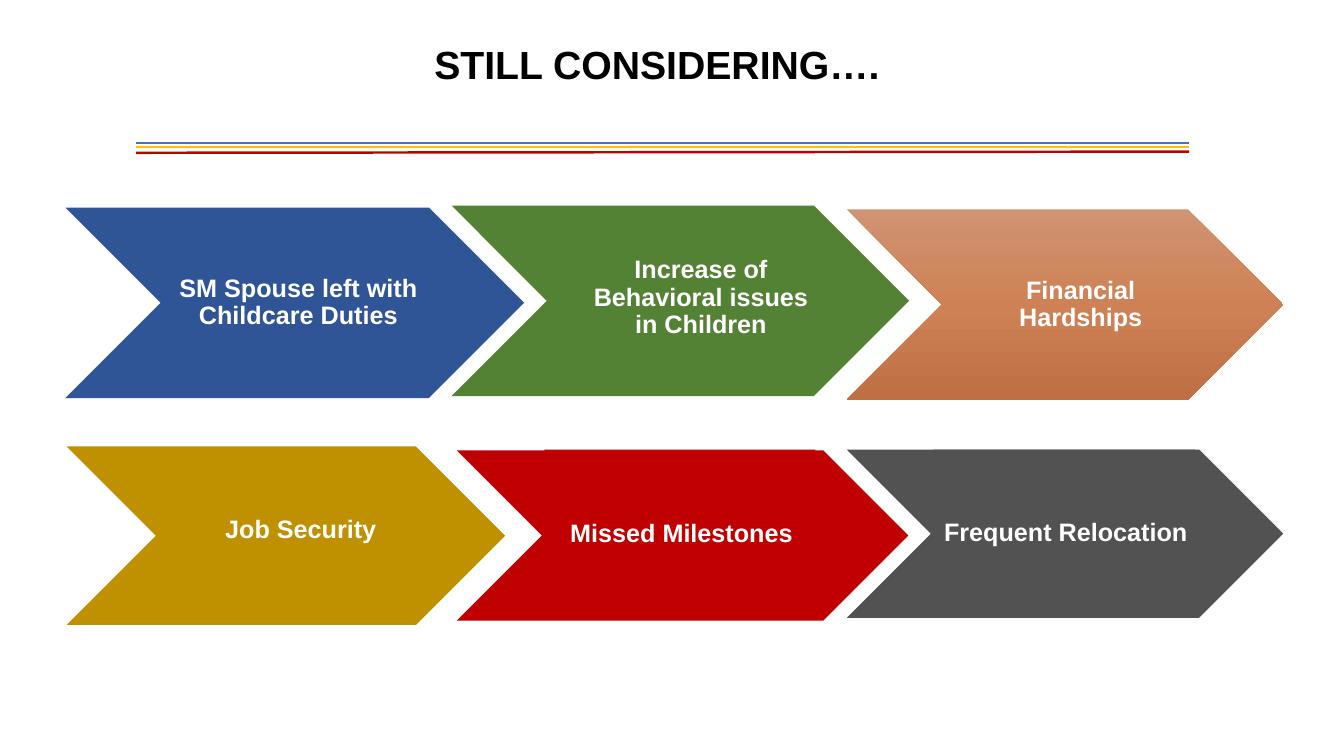
import copy
import dataclasses

import pptx
import pptx.dml.color
import pptx.enum.shapes
import pptx.enum.text
import pptx.oxml.ns
import pptx.util
from lxml import etree

Cm = pptx.util.Cm
RGB = pptx.dml.color.RGBColor
SHAPE = pptx.enum.shapes.MSO_SHAPE
Box = tuple[float, float, float, float]

COLORS = {
    "black": "000000", "white": "FFFFFF", "sky": "4472C4", "amber": "FFC000",
    "blue": "2F5597", "green": "548235", "gold": "BF9000", "red": "C00000",
    "gray": "525252", "light": "D09373", "clay": "CE8154", "dark": "BE7044",
}
FADE = ("light", "clay", "dark")


@dataclasses.dataclass
class Step:
    text: str
    fill: str  # a color name, or "fade" for the gradient
    arrow: Box
    label: Box


@dataclasses.dataclass
class Rule:
    color: str
    start: float
    end: float


RULES = [
    Rule("sky", 3.61, 3.61),
    Rule("amber", 3.71, 3.71),
    Rule("red", 3.85, 3.82),
]

STEPS = [
    Step("SM Spouse left with Childcare Duties", "blue",
         (1.65, 5.23, 11.56, 4.8), (4.42, 5.59, 6.12, 4.09)),
    Step("Increase of Behavioral issues in Children", "green",
         (11.38, 5.18, 11.53, 4.8), (14.55, 5.59, 6.15, 3.84)),
    Step("Frequent Relocation", "gray",
         (21.34, 11.33, 11, 4.24), (23.52, 11.33, 6.6, 4.24)),
    Step("Financial Hardships", "fade",
         (21.34, 5.28, 11, 4.8), (24.26, 5.28, 5.87, 4.8)),
    Step("Missed Milestones", "red",
         (11.51, 11.35, 11.38, 4.29), (13.72, 11.33, 6.83, 4.29)),
    Step("Job Security", "gold",
         (1.68, 11.25, 11.05, 4.5), (4.67, 11.68, 5.74, 3.38)),
]


def rgb(name: str) -> RGB:
    return RGB.from_string(COLORS[name])


def write(shape, text: str, size: int, color: str) -> None:
    frame = shape.text_frame
    frame.word_wrap = True
    frame.vertical_anchor = pptx.enum.text.MSO_ANCHOR.MIDDLE
    frame.text = text
    para = frame.paragraphs[0]
    para.alignment = pptx.enum.text.PP_ALIGN.CENTER
    para.line_spacing = 0.9
    font = para.runs[0].font
    font.name, font.size, font.bold = "Arial", pptx.util.Pt(size), True
    font.color.rgb = rgb(color)


def fade(shape) -> None:
    """Fill with three stops, from top to bottom."""
    shape.fill.gradient()
    shape.fill.gradient_angle = 270
    stops = shape.fill.gradient_stops
    nodes = shape._element.spPr.find(".//" + pptx.oxml.ns.qn("a:gsLst"))
    nodes.insert(1, copy.deepcopy(nodes[0]))
    stops = shape.fill.gradient_stops
    for i, name in enumerate(FADE):
        stops[i].position = i / 2
        stops[i].color.rgb = rgb(name)


def block(slide, kind, box: Box, fill: str):
    shape = slide.shapes.add_shape(kind, *map(Cm, box))
    shape.shadow.inherit = False
    shape.line.fill.background()
    if fill == "fade":
        fade(shape)
    else:
        shape.fill.solid()
        shape.fill.fore_color.rgb = rgb(fill)
    return shape


def draw_rule(slide, rule: Rule) -> None:
    line = slide.shapes.add_connector(
        pptx.enum.shapes.MSO_CONNECTOR.STRAIGHT,
        Cm(3.43), Cm(rule.start), Cm(29.97), Cm(rule.end))
    line.line.color.rgb = rgb(rule.color)
    line.line.width = pptx.util.Pt(1.75)
    etree.SubElement(line._element.spPr, pptx.oxml.ns.qn("a:effectLst"))


def draw_step(slide, step: Step) -> None:
    block(slide, SHAPE.CHEVRON, step.arrow, step.fill)
    if step.fill == "fade":
        label = slide.shapes.add_textbox(*map(Cm, step.label))
    else:
        label = block(slide, SHAPE.RECTANGLE, step.label, step.fill)
    write(label, step.text, 18, "white")
    frame = label.text_frame
    frame.margin_left, frame.margin_right = Cm(0.08), 0
    frame.margin_top = frame.margin_bottom = Cm(0.03)


def main() -> None:
    deck = pptx.Presentation()
    deck.slide_width, deck.slide_height = Cm(33.87), Cm(19.05)
    slide = deck.slides.add_slide(deck.slide_layouts[6])

    # Rules under the title
    for rule in RULES:
        draw_rule(slide, rule)

    # Title
    title = slide.shapes.add_textbox(Cm(2.51), Cm(0.28), Cm(28.09), Cm(2.82))
    write(title, "STILL CONSIDERING….", 28, "black")

    # Chevrons with labels
    for step in STEPS:
        draw_step(slide, step)

    deck.save("out.pptx")


if __name__ == "__main__":
    main()
